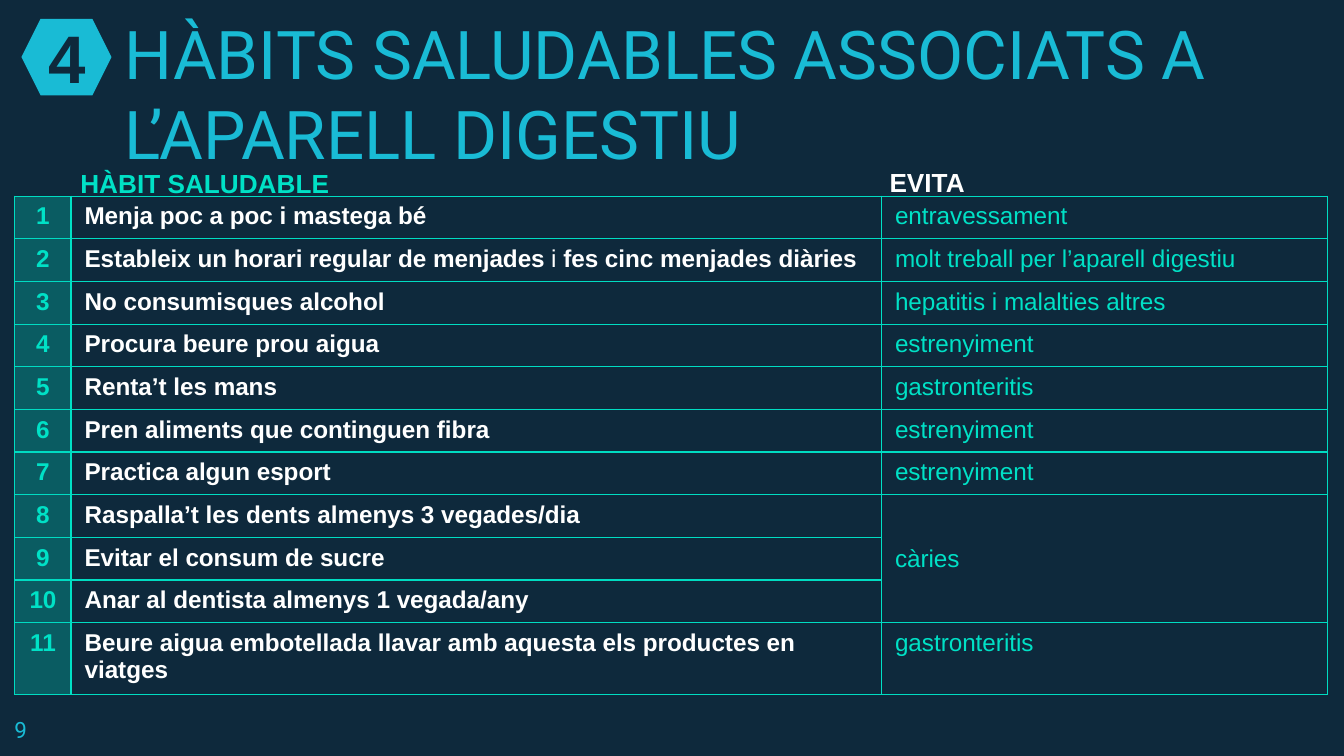
"""Build the slide on healthy habits for the digestive system."""
from lxml import etree
from pptx import Presentation
from pptx.dml.color import RGBColor
from pptx.enum.shapes import MSO_SHAPE
from pptx.enum.text import MSO_ANCHOR, PP_ALIGN
from pptx.oxml import parse_xml
from pptx.oxml.ns import nsdecls, qn
from pptx.util import Inches, Pt

NAVY, CYAN, MINT, EDGE, WHITE = "0E293C", "19BBD5", "00E1C6", "00DCC2", "FFFFFF"


def rgb(color):
    return RGBColor.from_string(color)


def write(tf, text, size=13, color=MINT, bold=False, font="Arial", align=PP_ALIGN.LEFT):
    p = tf.paragraphs[0]
    p.alignment = align
    r = p.add_run()
    r.text = text
    r.font.name, r.font.size, r.font.bold = font, Pt(size), bold
    r.font.color.rgb = rgb(color)


prs = Presentation()
prs.slide_width = Inches(10)
prs.slide_height = prs.slide_width * 9 // 16
s = prs.slides.add_slide(prs.slide_layouts[6])
s.background.fill.solid()
s.background.fill.fore_color.rgb = rgb(NAVY)

boxes = [
    ((0.83, 0, 9.34, 1.39), 0.1, True, MSO_ANCHOR.BOTTOM,
     "HÀBITS SALUDABLES ASSOCIATS A L’APARELL DIGESTIU",
     dict(size=36, color=CYAN, font="Roboto")),
    ((0.01, 5.23, 0.6, 0.39), 0.1, True, MSO_ANCHOR.TOP, "9",
     dict(size=12, color=CYAN, font="Roboto")),
    ((0.5, 1.2, 2.07, 0.34), 0.05, False, MSO_ANCHOR.TOP, "HÀBIT SALUDABLE",
     dict(size=14, bold=True)),
    ((6.52, 1.19, 0.78, 0.34), 0.05, False, MSO_ANCHOR.TOP, "EVITA",
     dict(size=14, color=WHITE, bold=True)),
]
for place, inset, wrap, anchor, text, style in boxes:
    tf = s.shapes.add_textbox(*[Inches(v) for v in place]).text_frame
    tf.margin_top = tf.margin_bottom = Inches(inset)
    tf.word_wrap, tf.vertical_anchor = wrap, anchor
    write(tf, text, **style)

sp = s.shapes.add_shape(MSO_SHAPE.HEXAGON, Inches(0.16), Inches(0.14), Inches(0.67), Inches(0.57))
sp.shadow.inherit = False
sp.fill.solid()
sp.fill.fore_color.rgb = rgb(CYAN)
sp.line.fill.background()
sp.text_frame.vertical_anchor = MSO_ANCHOR.MIDDLE
write(sp.text_frame, "4", size=36, color=NAVY, bold=True, align=PP_ALIGN.CENTER)

habits = [
    (["Menja poc a poc i mastega bé"], "entravessament"),
    (["Estableix un horari regular de menjades", " i ", "fes cinc menjades diàries"],
     "molt treball per l’aparell digestiu"),
    (["No consumisques alcohol"], "hepatitis i malalties altres"),
    (["Procura beure prou aigua"], "estrenyiment"),
    (["Renta’t les mans"], "gastronteritis"),
    (["Pren aliments que continguen fibra"], "estrenyiment"),
    (["Practica algun esport"], "estrenyiment"),
    (["Raspalla’t les dents almenys 3 vegades/dia"], "càries"),
    (["Evitar el consum de sucre"], ""),
    (["Anar al dentista almenys 1 vegada/any"], ""),
    (["Beure aigua embotellada llavar amb aquesta els productes en viatges"], "gastronteritis"),
]
widths = [0.42, 6.03, 3.32]
frame = s.shapes.add_table(len(habits), len(widths), Inches(0.11), Inches(1.46),
                           Inches(sum(widths)), Inches(3.7))
table = frame.table
table.first_row = table.horz_banding = False
for column, width in zip(table.columns, widths):
    column.width = Inches(width)

for i, (habit, avoids) in enumerate(habits):
    table.rows[i].height = Inches(0.24)
    number, advice, result = cells = table.rows[i].cells
    write(number.text_frame, str(i + 1), bold=True, align=PP_ALIGN.CENTER)
    for k, part in enumerate(habit):
        write(advice.text_frame, part, color=WHITE, bold=k % 2 == 0)
    if avoids:
        write(result.text_frame, avoids)
    for j, cell in enumerate(cells):
        cell.margin_left = cell.margin_right = Inches(0.1)
        if j == 0:
            cell.fill.solid()
            cell.fill.fore_color.rgb = rgb(MINT)
            tint = next(cell._tc.tcPr.iter(qn("a:srgbClr")))
            etree.SubElement(tint, qn("a:alpha"), val="28000")
        else:
            cell.fill.background()
        inner = {"L": j > 0, "R": j < 2, "T": False, "B": False}
        for k, (side, thick) in enumerate(inner.items()):
            color, width = (MINT, Pt(1)) if thick else (EDGE, Pt(0.75))
            cell._tc.tcPr.insert(k, parse_xml(
                f'<a:ln{side} {nsdecls("a")} w="{width}"><a:solidFill>'
                f'<a:srgbClr val="{color}"/></a:solidFill></a:ln{side}>'))

table.cell(7, 2).merge(table.cell(9, 2))
table.cell(7, 2).vertical_anchor = MSO_ANCHOR.MIDDLE
frame.height = Inches(3.7)

prs.save("out.pptx")
